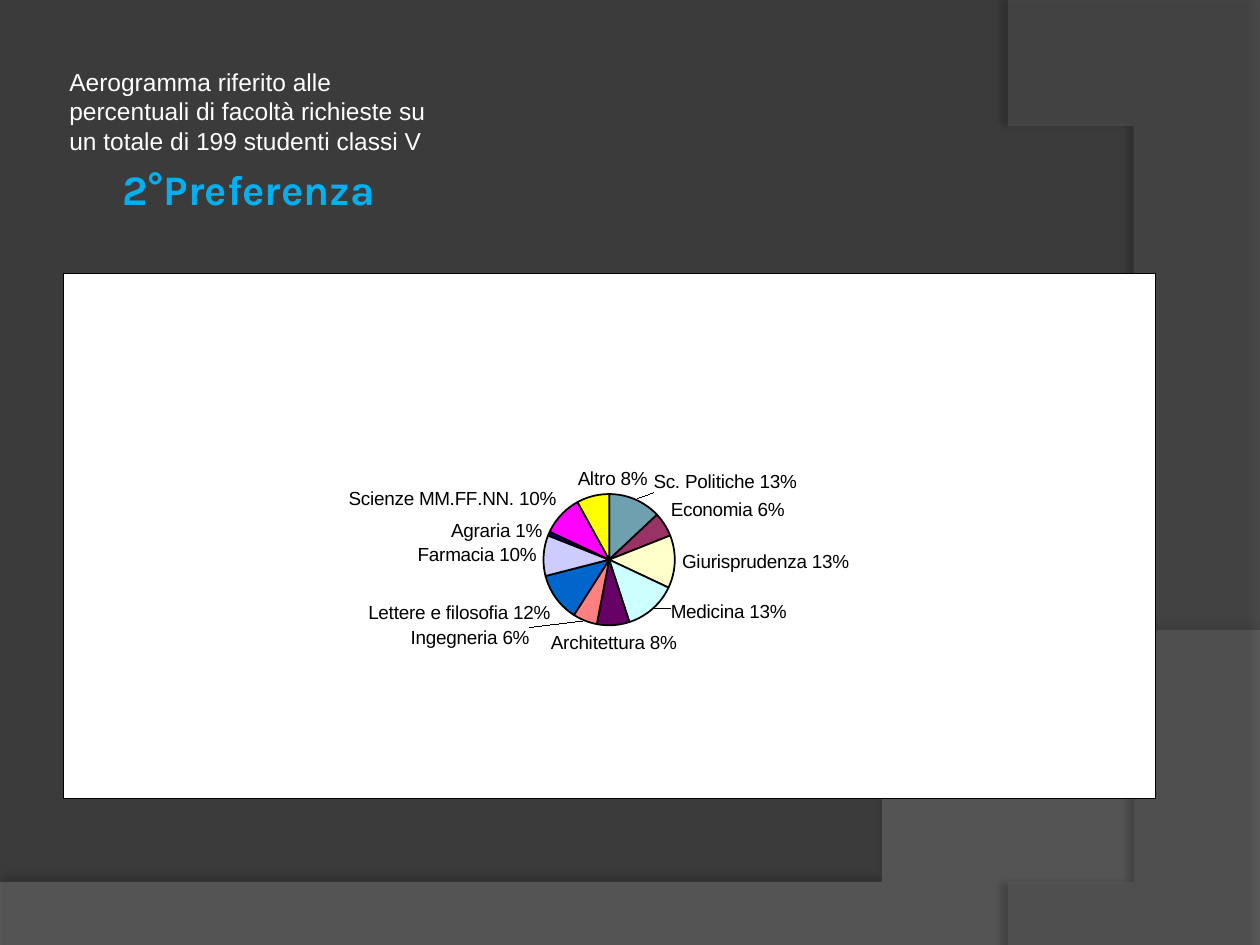
from lxml.etree import SubElement
from pptx import Presentation
from pptx.chart.data import CategoryChartData
from pptx.dml.color import RGBColor
from pptx.enum.chart import XL_CHART_TYPE, XL_LABEL_POSITION
from pptx.enum.text import MSO_ANCHOR, MSO_AUTO_SIZE, PP_ALIGN
from pptx.oxml import parse_xml
from pptx.oxml.ns import nsdecls, qn
from pptx.util import Inches, Pt

BACKGROUND = RGBColor(0x3B, 0x3B, 0x3B)
LOWER_WAVE = RGBColor(0x7F, 0x7F, 0x7F)
RIGHT_WAVE = RGBColor(0x5E, 0x5E, 0x5E)
SKY_BLUE = RGBColor(0x00, 0xB0, 0xF0)
WHITE = RGBColor(0xFF, 0xFF, 0xFF)
BLACK = RGBColor(0x00, 0x00, 0x00)

# Faculty, percentage of students, slice colour
FACULTIES = [
    ("Sc. Politiche", 13, RGBColor(0x6E, 0xA0, 0xB0)),
    ("Economia", 6, RGBColor(0x99, 0x33, 0x66)),
    ("Giurisprudenza", 13, RGBColor(0xFF, 0xFF, 0xCC)),
    ("Medicina", 13, RGBColor(0xCC, 0xFF, 0xFF)),
    ("Architettura", 8, RGBColor(0x66, 0x00, 0x66)),
    ("Ingegneria", 6, RGBColor(0xFF, 0x80, 0x80)),
    ("Lettere e filosofia", 12, RGBColor(0x00, 0x66, 0xCC)),
    ("Farmacia", 10, RGBColor(0xCC, 0xCC, 0xFF)),
    ("Agraria", 1, RGBColor(0x00, 0x00, 0x80)),
    ("Scienze MM.FF.NN.", 10, RGBColor(0xFF, 0x00, 0xFF)),
    ("Altro", 8, RGBColor(0xFF, 0xFF, 0x00)),
]


def curve(start, control_1, control_2, end, steps=48):
    """Points along a cubic Bezier curve."""
    points = []
    for step in range(steps + 1):
        t = step / steps
        weights = ((1 - t) ** 3, 3 * t * (1 - t) ** 2, 3 * t ** 2 * (1 - t), t ** 3)
        corners = (start, control_1, control_2, end)
        points.append(tuple(sum(w * c[axis] for w, c in zip(weights, corners))
                            for axis in (0, 1)))
    return points


def add_wave(slide, points, color, opacity, shadow_opacity, distance, direction):
    """Translucent background shape with a soft shadow."""
    builder = slide.shapes.build_freeform(*points[0], scale=Inches(1))
    builder.add_line_segments(points[1:], close=True)
    wave = builder.convert_to_shape()
    wave.fill.solid()
    wave.fill.fore_color.rgb = color
    wave.line.fill.background()
    fill_color = wave.fill._xPr.find(qn("a:solidFill"))[0]
    SubElement(fill_color, qn("a:alpha"), val=str(opacity * 1000))
    wave._element.spPr.append(parse_xml(
        f'<a:effectLst {nsdecls("a")}><a:outerShdw blurRad="{Pt(4)}" '
        f'dist="{Pt(distance)}" dir="{direction * 60000}" algn="ctr" rotWithShape="0">'
        f'<a:srgbClr val="{BLACK}"><a:alpha val="{shadow_opacity * 1000}"/></a:srgbClr>'
        '</a:outerShdw></a:effectLst>'))


def fill_placeholder(holder, box, text, font_name, size, color, bold, anchor):
    holder.left, holder.top, holder.width, holder.height = map(Inches, box)
    frame = holder.text_frame
    frame.word_wrap = True
    frame.auto_size = MSO_AUTO_SIZE.NONE
    frame.vertical_anchor = anchor
    frame.margin_left = frame.margin_right = Inches(0.05)
    frame.margin_top = frame.margin_bottom = 0
    frame.text = text
    paragraph = frame.paragraphs[0]
    paragraph.alignment = PP_ALIGN.LEFT
    font = paragraph.font
    font.name, font.size, font.bold = font_name, Pt(size), bold
    font.color.rgb = color
    return paragraph


def set_black_text(font):
    font.name, font.size = "Arial", Pt(10.8)
    font.color.rgb = BLACK


def frame_chart(chart):
    """White chart area with a thin border, and a fixed plot position."""
    space = chart._chartSpace
    space.chart.addprevious(parse_xml(f'<c:roundedCorners {nsdecls("c")} val="0"/>'))
    space.chart.addnext(parse_xml(
        f'<c:spPr {nsdecls("c", "a")}>'
        f'<a:solidFill><a:srgbClr val="{WHITE}"/></a:solidFill>'
        f'<a:ln w="{Pt(0.25)}"><a:solidFill><a:srgbClr val="{BLACK}"/></a:solidFill></a:ln>'
        '</c:spPr>'))
    plot_area = space.chart.plotArea
    for layout in plot_area.findall(qn("c:layout")):
        plot_area.remove(layout)
    position = "".join(f'<c:{key} val="{value}"/>' for key, value in (
        ("layoutTarget", "inner"), ("xMode", "edge"), ("yMode", "edge"),
        ("x", 0.28), ("y", 0.42), ("w", 0.44), ("h", 0.25)))
    plot_area.insert(0, parse_xml(
        f'<c:layout {nsdecls("c")}><c:manualLayout>{position}</c:manualLayout></c:layout>'))


def add_faculty_pie(slide):
    data = CategoryChartData()
    data.categories = [name for name, _, _ in FACULTIES]
    data.add_series("Series 1", [share for _, share, _ in FACULTIES])
    chart = slide.shapes.add_chart(
        XL_CHART_TYPE.PIE, Inches(0.5), Inches(2.17), Inches(8.67), Inches(4.17), data).chart
    chart.has_title = chart.has_legend = False
    set_black_text(chart.font)
    frame_chart(chart)
    chart.plots[0].vary_by_categories = True

    # Slices
    series = chart.plots[0].series[0]
    for index, (_, _, color) in enumerate(FACULTIES):
        slice_format = series.points[index].format
        slice_format.fill.solid()
        slice_format.fill.fore_color.rgb = color
        slice_format.line.color.rgb = BLACK
        slice_format.line.width = Pt(1)

    # Labels: faculty and percentage on one line
    labels = series.data_labels
    labels.show_value = False
    labels.show_category_name = labels.show_percentage = True
    labels.number_format, labels.number_format_is_linked = "0%", False
    labels.position = XL_LABEL_POSITION.BEST_FIT
    set_black_text(labels.font)
    labels._element.find(qn("c:showBubbleSize")).addnext(
        parse_xml(f'<c:separator {nsdecls("c")}> </c:separator>'))


def main():
    prs = Presentation()
    prs.slide_width, prs.slide_height = Inches(10), Inches(7.5)
    slide = prs.slides.add_slide(prs.slide_layouts[7])
    slide.background.fill.solid()
    slide.background.fill.fore_color.rgb = BACKGROUND
    title, content, caption = slide.placeholders
    content._element.getparent().remove(content._element)

    # Background waves
    add_wave(slide, [(0, 7.5), (10, 7.5)] + curve((10, 5.2), (5.59, 7.29), (3.91, 7.19), (0, 7.05)),
             LOWER_WAVE, 45, 35, 3.5, 270)
    add_wave(slide, [(10, 0.02), (10, 7.5)] + curve((8.21, 7.5), (9.35, 6.19), (10.18, 3), (8, 0)),
             RIGHT_WAVE, 40, 45, 4, 180)

    # Heading and caption
    heading = fill_placeholder(title, (0.5, 1.3, 3.5, 0.8), "2°Preferenza",
                               "Karla", 24, SKY_BLUE, True, MSO_ANCHOR.TOP)
    heading._p.get_or_add_pPr().set("marL", str(Inches(0.42)))
    summary = fill_placeholder(
        caption, (0.5, 0.23, 3, 1),
        "Aerogramma riferito alle percentuali di facoltà richieste su "
        "un totale di 199 studenti classi V",
        "Arial", 14, WHITE, False, MSO_ANCHOR.BOTTOM)
    summary.space_before = Pt(2.8)

    add_faculty_pie(slide)
    prs.save("out.pptx")


if __name__ == "__main__":
    main()
